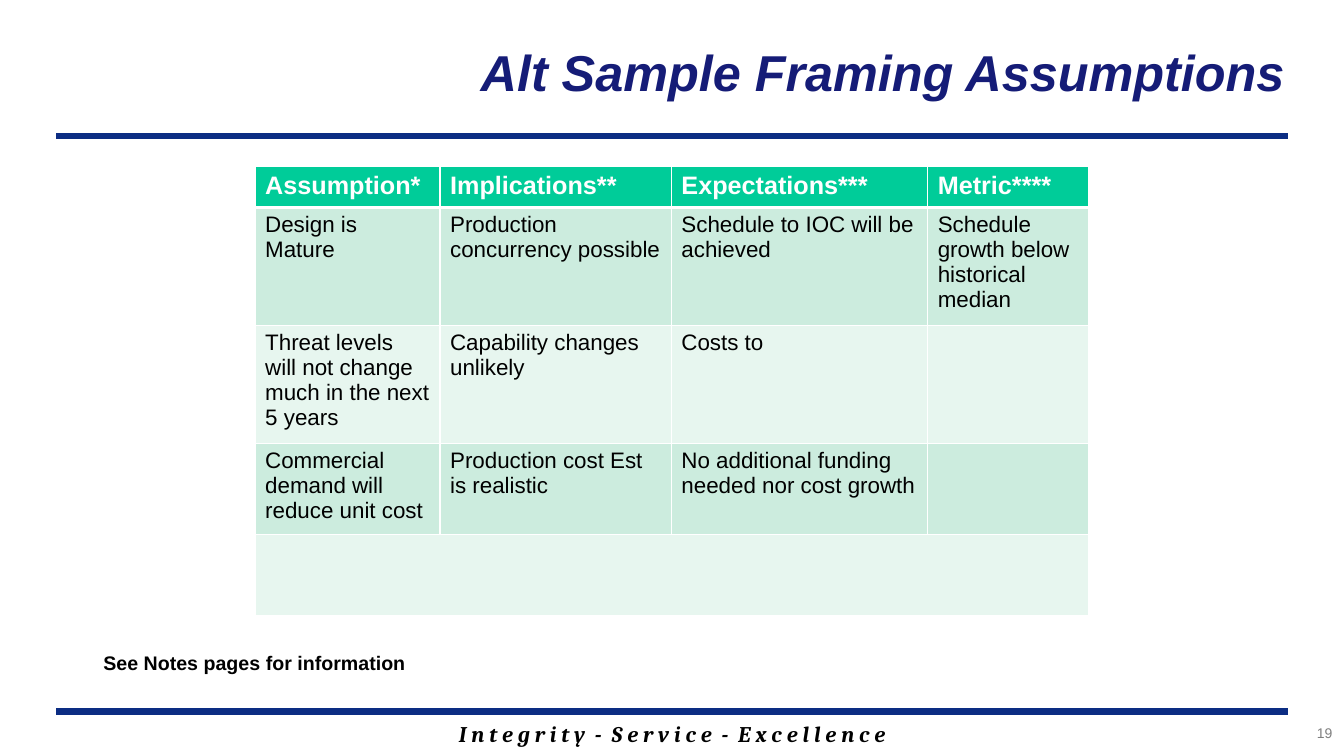
import pptx
import pptx.dml.color
import pptx.enum.shapes
import pptx.enum.text
import pptx.oxml
import pptx.oxml.ns
import pptx.util
from pptx.dml.color import RGBColor
from pptx.util import Cm

WHITE = RGBColor(0xFF, 0xFF, 0xFF)
BLACK = RGBColor(0x00, 0x00, 0x00)
GREY = RGBColor(0x7F, 0x7F, 0x7F)
NAVY = RGBColor(0x15, 0x1C, 0x77)
RULE_BLUE = RGBColor(0x0C, 0x2D, 0x83)
HEADER_GREEN = RGBColor(0x00, 0xCC, 0x99)
BAND_GREENS = (RGBColor(0xCC, 0xEC, 0xDE), RGBColor(0xE7, 0xF6, 0xEF))

LEFT = pptx.enum.text.PP_ALIGN.LEFT
CENTER = pptx.enum.text.PP_ALIGN.CENTER
RIGHT = pptx.enum.text.PP_ALIGN.RIGHT
TOP = pptx.enum.text.MSO_ANCHOR.TOP
MIDDLE = pptx.enum.text.MSO_ANCHOR.MIDDLE

COLUMN_WIDTHS = (4.66, 5.83, 6.46, 4.05)
ROW_HEIGHTS = (1.04, 2.97, 2.97, 2.29, 2.06)
ASSUMPTIONS = (
    ("Assumption*", "Implications**", "Expectations***", "Metric****"),
    ("Design is Mature", "Production concurrency possible",
     "Schedule to IOC will be achieved",
     "Schedule growth below historical median"),
    ("Threat levels will not change much in the next 5 years",
     "Capability changes unlikely", "Costs to", ""),
    ("Commercial demand will reduce unit cost",
     "Production cost Est is realistic",
     "No additional funding needed nor cost growth", ""),
    ("", "", "", ""),
)


def add_run(paragraph, text, size, color, bold=False, italic=False, name="Arial"):
    run = paragraph.add_run()
    run.text = text
    font = run.font
    font.name = name
    font.size = pptx.util.Pt(size)
    font.bold = bold
    font.italic = italic
    font.color.rgb = color


def add_text(slide, left, top, width, height, text, size, color,
             align=LEFT, anchor=TOP, wrap=True, **style):
    box = slide.shapes.add_textbox(Cm(left), Cm(top), Cm(width), Cm(height))
    frame = box.text_frame
    frame.word_wrap = wrap
    frame.vertical_anchor = anchor
    paragraph = frame.paragraphs[0]
    paragraph.alignment = align
    add_run(paragraph, text, size, color, **style)


def add_rule(slide, top):
    rule = slide.shapes.add_connector(
        pptx.enum.shapes.MSO_CONNECTOR.STRAIGHT,
        Cm(1.42), Cm(top), Cm(32.46), Cm(top))
    rule.line.color.rgb = RULE_BLUE
    rule.line.width = pptx.util.Pt(4.5)
    properties = rule._element.spPr
    properties.append(pptx.oxml.parse_xml(
        f'<a:effectLst {pptx.oxml.ns.nsdecls("a")}/>'))


def set_borders(cell, top, bottom):
    """Draw white cell borders; top and bottom widths are in points."""
    properties = cell._tc.get_or_add_tcPr()
    widths = {"lnL": 1, "lnR": 1, "lnT": top, "lnB": bottom}
    for position, (tag, width) in enumerate(widths.items()):
        properties.insert(position, pptx.oxml.parse_xml(
            f'<a:{tag} {pptx.oxml.ns.nsdecls("a")} w="{pptx.util.Pt(width)}">'
            f'<a:solidFill><a:srgbClr val="{WHITE}"/></a:solidFill></a:{tag}>'))


def add_assumptions_table(slide, left, top):
    table = slide.shapes.add_table(
        len(ROW_HEIGHTS), len(COLUMN_WIDTHS), Cm(left), Cm(top),
        Cm(sum(COLUMN_WIDTHS)), Cm(sum(ROW_HEIGHTS))).table
    for column, width in zip(table.columns, COLUMN_WIDTHS):
        column.width = Cm(width)
    for row, height in zip(table.rows, ROW_HEIGHTS):
        row.height = Cm(height)

    for row_index, texts in enumerate(ASSUMPTIONS):
        header = row_index == 0
        fill = HEADER_GREEN if header else BAND_GREENS[(row_index - 1) % 2]
        for column_index, text in enumerate(texts):
            cell = table.cell(row_index, column_index)
            cell.fill.solid()
            cell.fill.fore_color.rgb = fill
            set_borders(cell, top=3 if row_index == 1 else 1,
                        bottom=3 if header else 1)
            if text:
                add_run(cell.text_frame.paragraphs[0], text,
                        18 if header else 16, WHITE if header else BLACK,
                        bold=header)

    # The last row is one wide empty cell
    last_row = len(ROW_HEIGHTS) - 1
    table.cell(last_row, 0).merge(table.cell(last_row, len(COLUMN_WIDTHS) - 1))


def main():
    presentation = pptx.Presentation()
    presentation.slide_width = Cm(33.87)
    presentation.slide_height = Cm(19.05)
    slide = presentation.slides.add_slide(presentation.slide_layouts[6])

    # Footer motto and the two rules
    add_text(slide, 4.8, 18.03, 24.28, 0.94,
             "I n t e g r i t y  -  S e r v i c e  -  E x c e l l e n c e",
             16, BLACK, align=CENTER, bold=True, italic=True, name="Cambria")
    for top in (17.93, 3.43):
        add_rule(slide, top)

    # Title
    add_text(slide, 6.17, 0.2, 26.47, 3.18, "Alt Sample Framing Assumptions",
             36, NAVY, align=RIGHT, anchor=MIDDLE, bold=True, italic=True)

    # Table, note and page number
    add_assumptions_table(slide, 6.43, 4.19)
    add_text(slide, 2.34, 16.28, 8.15, 0.86, "See Notes pages for information",
             14, BLACK, align=CENTER, wrap=False, bold=True)
    add_text(slide, 29.59, 18.14, 4.24, 0.84, "19", 10, GREY, align=RIGHT)

    presentation.save("out.pptx")


if __name__ == "__main__":
    main()
